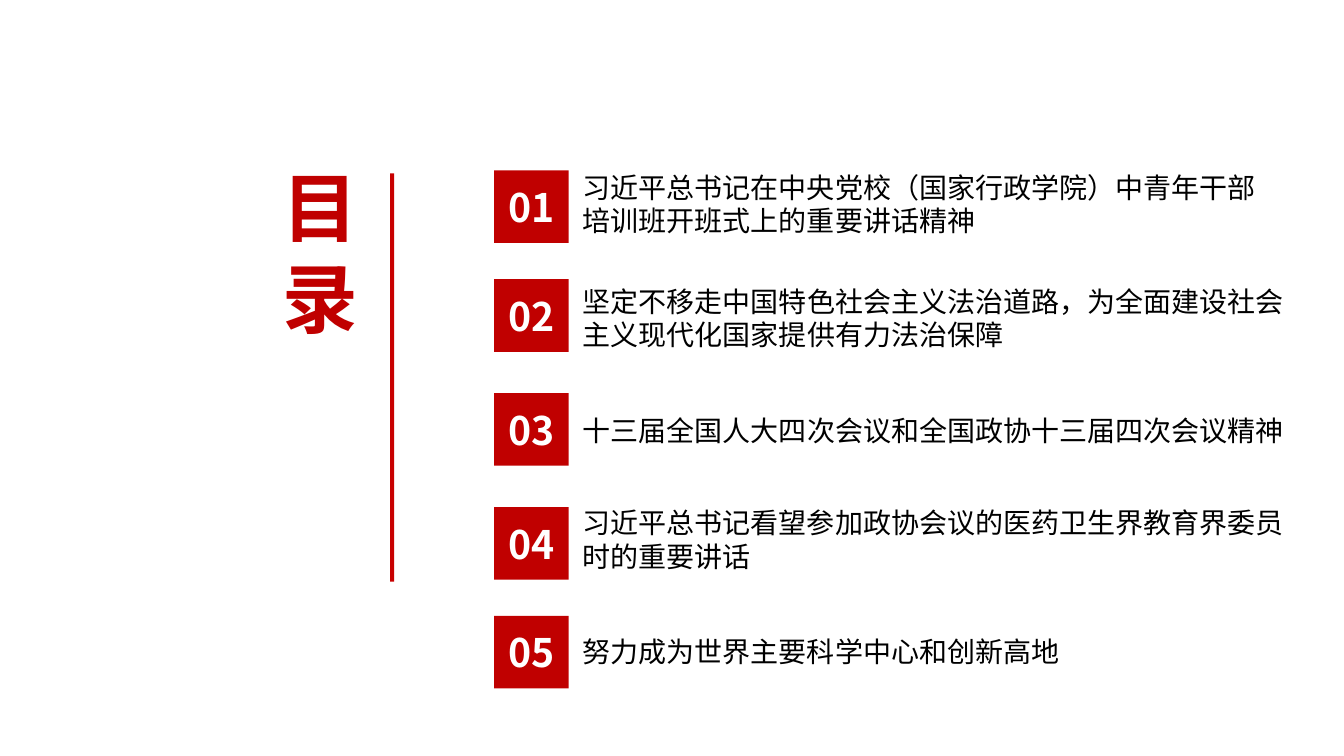
from lxml import etree
from pptx import Presentation
from pptx import util as u
from pptx.dml.color import RGBColor
from pptx.enum import shapes, text
from pptx.oxml.ns import qn

PX = 9144
FONT = "Noto Sans CJK SC"
COLORS = {"red": "C00000", "rule": "C80000", "white": "FFFFFF", "ink": "000000"}
TILE_W, TILE_H = 74, 72
TOPIC_LEFT = 78

AGENDA = [
    (169, -5, 704, 77, "习近平总书记在中央党校（国家行政学院）中青年干部培训班开班式上的重要讲话精神"),
    (277, 0, 721, 77, "坚定不移走中国特色社会主义法治道路，为全面建设社会主义现代化国家提供有力法治保障"),
    (390, 15, 721, 44, "十三届全国人大四次会议和全国政协十三届四次会议精神"),
    (503, -6, 716, 77, "习近平总书记看望参加政协会议的医药卫生界教育界委员时的重要讲话"),
    (611, 14, 704, 44, "努力成为世界主要科学中心和创新高地"),
]


def px(*lengths):
    return [u.Emu(length * PX) for length in lengths]


def write(shape, wording, size, color, bold=False):
    frame = shape.text_frame
    frame.word_wrap = True
    frame.text = wording
    run = frame.paragraphs[0].runs[0]
    run.font.size = u.Pt(size)
    run.font.bold = bold
    run.font.name = FONT
    run.font.color.rgb = RGBColor.from_string(COLORS[color])
    east_asian = etree.Element(qn("a:ea"), typeface=FONT)
    run.font._element.find(qn("a:latin")).addnext(east_asian)
    return frame


def add_block(slide, left, top, width, height, color):
    block = slide.shapes.add_shape(
        shapes.MSO_SHAPE.RECTANGLE, *px(left, top, width, height))
    block.shadow.inherit = False
    block.fill.solid()
    block.fill.fore_color.rgb = RGBColor.from_string(COLORS[color])
    block.line.fill.background()
    return block


def add_heading(slide, left, top, width, height):
    heading = slide.shapes.add_textbox(*px(left, top, width, height))
    frame = write(heading, "目录", 54, "red", bold=True)
    frame.margin_left, frame.margin_top, frame.margin_right, frame.margin_bottom = px(7, 4, 7, 4)
    add_block(slide, left + 114, top + 16, 4, 405, "rule")


def add_agenda_item(slide, left, top, number, topic_shift, topic_width, topic_height, wording):
    topic = slide.shapes.add_textbox(
        *px(left + TOPIC_LEFT, top + topic_shift, topic_width, topic_height))
    write(topic, wording, 20, "ink")
    tile = add_block(slide, left, top, TILE_W, TILE_H, "red")
    frame = write(tile, f"{number:02d}", 28, "white", bold=True)
    frame.vertical_anchor = text.MSO_ANCHOR.MIDDLE
    frame.paragraphs[0].alignment = text.PP_ALIGN.CENTER


def add_contents_slide(deck):
    slide = deck.slides.add_slide(deck.slide_layouts[6])
    add_heading(slide, 273, 156, 120, 189)
    for number, (top, *topic) in enumerate(AGENDA, 1):
        add_agenda_item(slide, 490, top, number, *topic)


def main():
    deck = Presentation()
    deck.slide_width, deck.slide_height = px(1333, 750)
    add_contents_slide(deck)
    deck.save("out.pptx")


if __name__ == "__main__":
    main()
